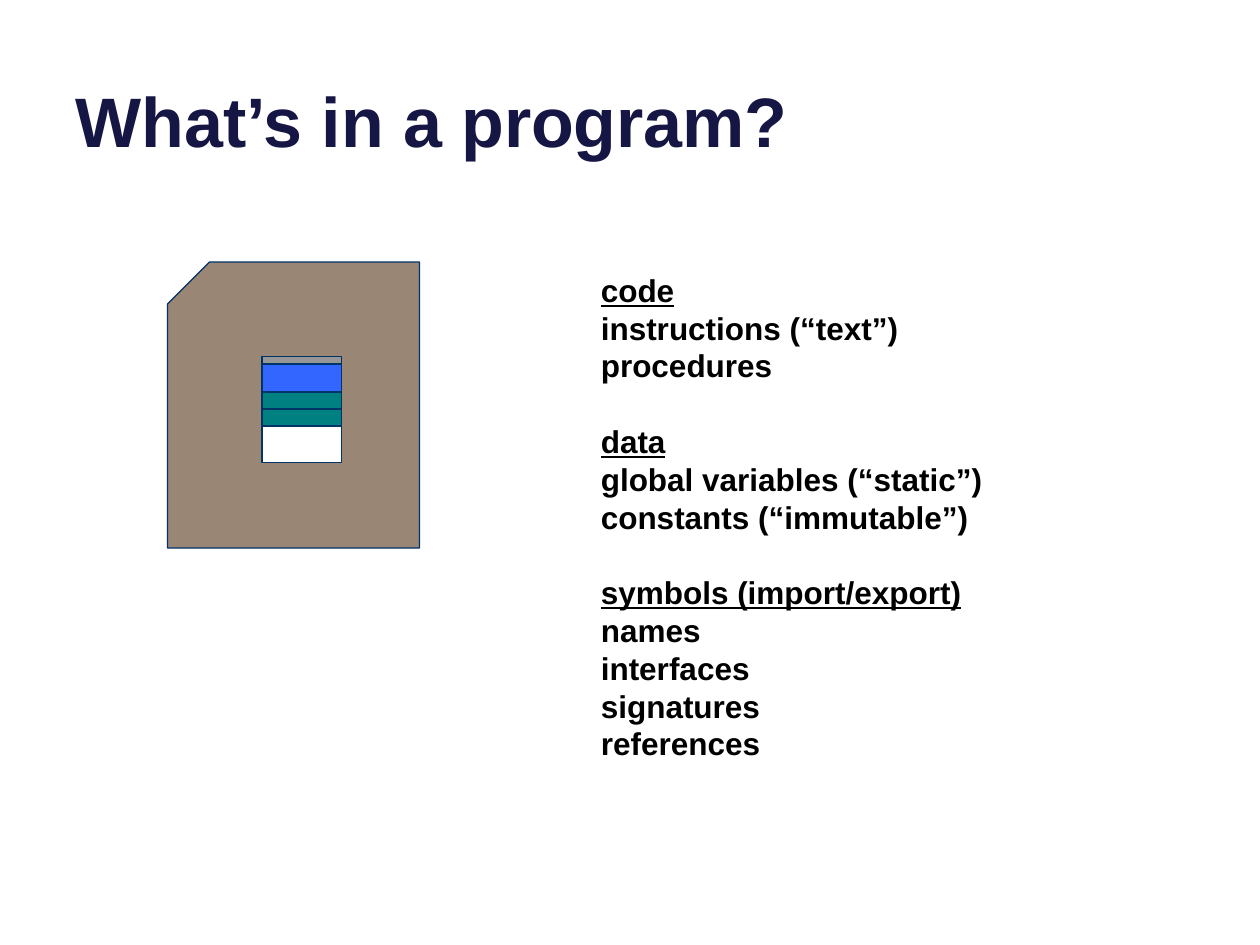
import pptx
import pptx.dml.color
import pptx.enum.shapes
import pptx.enum.text
import pptx.util

Inches = pptx.util.Inches
Pt = pptx.util.Pt
RGBColor = pptx.dml.color.RGBColor
Shape = pptx.enum.shapes.MSO_SHAPE

NAVY = RGBColor(0x16, 0x16, 0x45)
BLACK = RGBColor(0x00, 0x00, 0x00)
OUTLINE = RGBColor(0x00, 0x33, 0x67)
BROWN = RGBColor(0x99, 0x86, 0x74)
GRAY = RGBColor(0x96, 0x96, 0x96)
BLUE = RGBColor(0x33, 0x66, 0xFF)
TEAL = RGBColor(0x00, 0x80, 0x80)
WHITE = RGBColor(0xFF, 0xFF, 0xFF)

SEGMENTS = [(GRAY, 0.06), (BLUE, 0.22), (TEAL, 0.135), (TEAL, 0.135), (WHITE, 0.29)]

SECTIONS = [
    ("code", ["instructions (“text”)", "procedures"]),
    ("data", ["global variables (“static”)", "constants (“immutable”)"]),
    ("symbols (import/export)", ["names", "interfaces", "signatures", "references"]),
]


class Painter:
    font = "Arial"
    body_size = 18
    line_pitch = 21.6

    def __init__(self, page):
        self.page = page

    def add_span(self, para, text, size, color, underline=False):
        span = para.add_run()
        span.text = text
        span.font.name = self.font
        span.font.size = Pt(size)
        span.font.bold = True
        span.font.underline = underline
        span.font.color.rgb = color

    def set_title(self, text, left, top, width, height):
        title = self.page.shapes.title
        title.left, title.top = Inches(left), Inches(top)
        title.width, title.height = Inches(width), Inches(height)
        frame = title.text_frame
        frame.word_wrap = True
        frame.vertical_anchor = pptx.enum.text.MSO_ANCHOR.BOTTOM
        para = frame.paragraphs[0]
        para.alignment = pptx.enum.text.PP_ALIGN.LEFT
        self.add_span(para, text, 40, NAVY)

    def add_block(self, kind, left, top, width, height, fill, line_width):
        block = self.page.shapes.add_shape(
            kind, Inches(left), Inches(top), Inches(width), Inches(height))
        block.shadow.inherit = False
        block.fill.solid()
        block.fill.fore_color.rgb = fill
        block.line.color.rgb = OUTLINE
        block.line.width = Pt(line_width)
        return block

    def add_stack(self, left, top, width, segments):
        """Stack filled blocks downwards, each (colour, height)."""
        for color, height in segments:
            self.add_block(Shape.FLOWCHART_PROCESS, left, top, width, height, color, 1)
            top += height

    def add_sections(self, left, top, width, height, sections):
        """Write underlined headings with their items, one line apart."""
        box = self.page.shapes.add_textbox(
            Inches(left), Inches(top), Inches(width), Inches(height))
        frame = box.text_frame
        frame.word_wrap = True
        para = frame.paragraphs[0]
        for number, (heading, items) in enumerate(sections):
            for row, text in enumerate([heading, *items]):
                if number or row:
                    para = frame.add_paragraph()
                para.line_spacing = Pt(self.line_pitch)
                if number and row == 0:
                    para.space_before = Pt(self.line_pitch)
                self.add_span(para, text, self.body_size, BLACK, underline=row == 0)


def main():
    deck = pptx.Presentation()
    deck.slide_width, deck.slide_height = Inches(10), Inches(7.5)
    painter = Painter(deck.slides.add_slide(deck.slide_layouts[5]))

    program = painter.add_block(Shape.SNIP_1_RECTANGLE, 1.33, 2.08, 2, 2.27, BROWN, 0.75)
    program.element.spPr.xfrm.set("flipH", "1")
    painter.set_title("What’s in a program?", 0.5, -0.37, 9, 1.7)
    painter.add_sections(4.67, 2.1, 3.42, 4.34, SECTIONS)
    painter.add_stack(2.08, 2.83, 0.63, SEGMENTS)

    deck.save("out.pptx")


if __name__ == "__main__":
    main()
